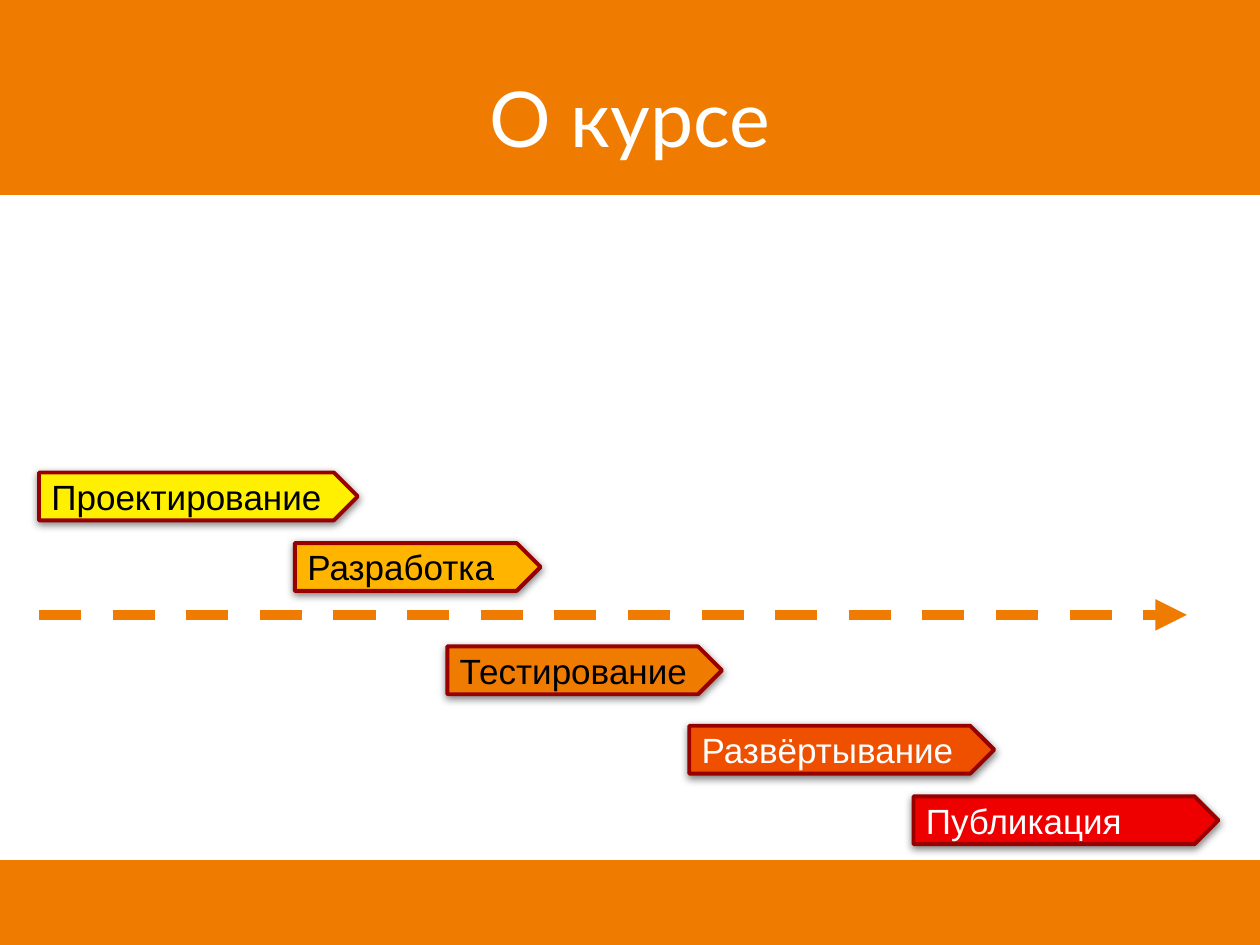
from dataclasses import dataclass

from lxml.etree import SubElement
from pptx import Presentation
from pptx.dml.color import RGBColor
from pptx.enum.dml import MSO_LINE
from pptx.enum.shapes import MSO_CONNECTOR, MSO_SHAPE
from pptx.enum.text import MSO_ANCHOR, PP_ALIGN
from pptx.oxml.ns import qn
from pptx.util import Inches, Pt


@dataclass(frozen=True)
class Theme:
    orange: str = "EF7C00"
    outline: str = "980000"
    dark: str = "000000"
    light: str = "FFFFFF"
    title_font: str = "Lato"
    stage_font: str = "Arial"
    title_size: int = 44
    stage_size: int = 20


THEME = Theme()


def add_filled(preset, box, fill, outline, outline_width):
    shape = slide.shapes.add_shape(preset, *(Inches(length) for length in box))
    shape.fill.solid()
    shape.fill.fore_color.rgb = RGBColor.from_string(fill)
    shape.line.color.rgb = RGBColor.from_string(outline)
    shape.line.width = Pt(outline_width)
    shape.shadow.inherit = False
    return shape


def write(paragraph, text, font, size, color):
    run = paragraph.add_run()
    run.text = text
    run.font.name = font
    run.font.size = Pt(size)
    run.font.color.rgb = RGBColor.from_string(color)


prs = Presentation()
prs.slide_width, prs.slide_height = Inches(10), Inches(7.5)
slide = prs.slides.add_slide(prs.slide_layouts[5])

# Title on its band, with the footer band below
title = slide.shapes.title
title.left, title.top = Inches(0.5), Inches(0.3)
title.width, title.height = Inches(9), Inches(1.25)
title.text_frame.vertical_anchor = MSO_ANCHOR.MIDDLE
heading = title.text_frame.paragraphs[0]
heading.alignment = PP_ALIGN.CENTER
write(heading, "О курсе", THEME.title_font, THEME.title_size, THEME.light)

for top, height in ((6.83, 0.67), (-0.03, 1.57)):
    band = add_filled(MSO_SHAPE.RECTANGLE, (0, top, 10, height),
                      THEME.orange, THEME.orange, 1)
    title.element.addprevious(band.element)

# Time axis
axis = slide.shapes.add_connector(
    MSO_CONNECTOR.STRAIGHT, Inches(0.31), Inches(4.88), Inches(9.42), Inches(4.88))
axis.line.color.rgb = RGBColor.from_string(THEME.orange)
axis.line.width = Pt(6)
axis.line.dash_style = MSO_LINE.DASH
SubElement(axis.line._get_or_add_ln(), qn("a:tailEnd"), type="triangle")
SubElement(axis.element.spPr, qn("a:effectLst"))

# Project stages: name, left, top, width, fill, text colour
stages = (
    ("Проектирование", 0.31, 3.75, 2.53, "FFEF00", THEME.dark),
    ("Разработка", 2.34, 4.31, 1.95, "FFB400", THEME.dark),
    ("Тестирование", 3.55, 5.13, 2.18, THEME.orange, THEME.dark),
    ("Развёртывание", 5.47, 5.76, 2.42, "EF5000", THEME.light),
    ("Публикация", 7.25, 6.32, 2.42, "EF0000", THEME.light),
)
for name, left, top, width, fill, text_color in stages:
    stage = add_filled(MSO_SHAPE.PENTAGON, (left, top, width, 0.38),
                       fill, THEME.outline, 2.25)
    effects = stage.element.spPr.find(qn("a:effectLst"))
    shadow = SubElement(effects, qn("a:outerShdw"), blurRad=str(Pt(4.5)),
                        dist=str(Pt(1.5)), dir="5400000", rotWithShape="0")
    shadow_color = SubElement(shadow, qn("a:srgbClr"), val=THEME.dark)
    SubElement(shadow_color, qn("a:alpha"), val="50000")

    frame = stage.text_frame
    frame.margin_left = frame.margin_right = Inches(0.1)
    frame.margin_top = frame.margin_bottom = Inches(0.1)
    frame.vertical_anchor = MSO_ANCHOR.MIDDLE
    label = frame.paragraphs[0]
    label.alignment = PP_ALIGN.LEFT
    write(label, name, THEME.stage_font, THEME.stage_size, text_color)

prs.save("out.pptx")
